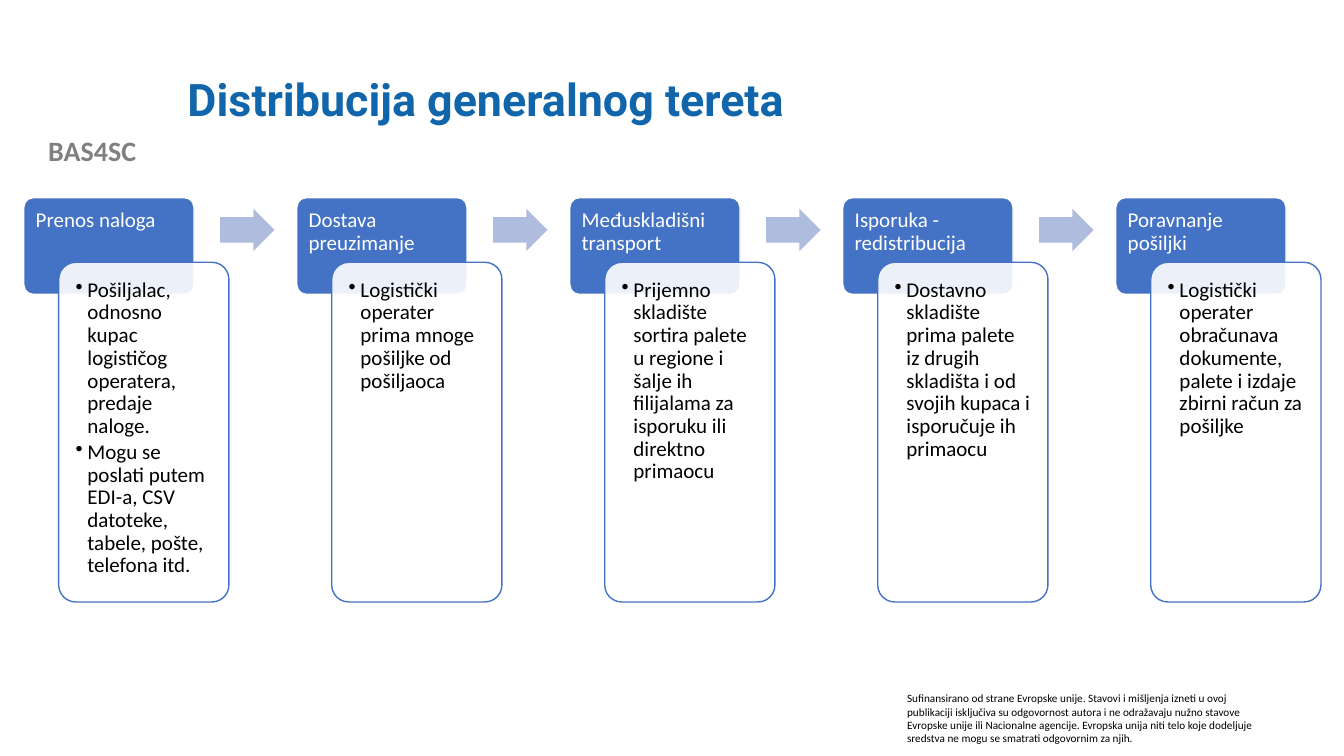
from lxml import etree
from pptx import Presentation
from pptx.dml.color import RGBColor
from pptx.enum.shapes import MSO_SHAPE
from pptx.enum.text import MSO_ANCHOR, MSO_AUTO_SIZE, PP_ALIGN
from pptx.oxml.ns import qn
from pptx.util import Cm, Pt

ROUNDED = MSO_SHAPE.ROUNDED_RECTANGLE
RIGHT_ARROW = MSO_SHAPE.RIGHT_ARROW
TOP = MSO_ANCHOR.TOP
MIDDLE = MSO_ANCHOR.MIDDLE
NO_AUTOFIT = MSO_AUTO_SIZE.NONE
LEFT = PP_ALIGN.LEFT
CENTER = PP_ALIGN.CENTER

BLUE, WHITE, BLACK = "4472C4", "FFFFFF", "000000"
TITLE_BLUE, GREY, ARROW_BLUE = "1065AB", "808080", "B0BCDE"

TITLE = "Distribucija generalnog tereta"
PROJECT = "BAS4SC"
DISCLAIMER = (
    "Sufinansirano od strane Evropske unije. Stavovi i mišljenja izneti u ovoj "
    "publikaciji isključiva su odgovornost autora i ne odražavaju nužno stavove "
    "Evropske unije ili Nacionalne agencije. Evropska unija niti telo koje dodeljuje "
    "sredstva ne mogu se smatrati odgovornim za njih."
)
STAGES = [
    ("Prenos naloga", [
        "Pošiljalac, odnosno kupac logističog operatera, predaje naloge.",
        "Mogu se poslati putem EDI-a, CSV datoteke, tabele, pošte, telefona itd.",
    ]),
    ("Dostava preuzimanje", ["Logistički operater prima mnoge pošiljke od pošiljaoca"]),
    ("Međuskladišni transport", [
        "Prijemno skladište sortira palete u regione i šalje ih filijalama za "
        "isporuku ili direktno primaocu",
    ]),
    ("Isporuka - redistribucija", [
        "Dostavno skladište prima palete iz drugih skladišta i od svojih kupaca "
        "i isporučuje ih primaocu",
    ]),
    ("Poravnanje pošiljki", [
        "Logistički operater obračunava dokumente, palete i izdaje zbirni račun za pošiljke",
    ]),
]


def color(hex_value):
    """Return the colour for a hex string."""
    return RGBColor.from_string(hex_value)


def format_paragraph(paragraph, size, hex_value, bold=False, font="Calibri", align=LEFT):
    """Set the alignment and the run fonts of a paragraph."""
    paragraph.alignment = align
    for run in paragraph.runs:
        run.font.name = font
        run.font.size = Pt(size)
        run.font.bold = bold
        run.font.color.rgb = color(hex_value)


def add_bullet(paragraph):
    """Give a paragraph a round bullet with a hanging indent."""
    properties = paragraph._p.get_or_add_pPr()
    properties.set("marL", str(Cm(0.3)))
    properties.set("indent", str(-Cm(0.3)))
    etree.SubElement(properties, qn("a:buChar")).set("char", "•")


def add_block(slide, kind, box, fill, line=None):
    """Add a flat preset shape in the given box."""
    shape = slide.shapes.add_shape(kind, *(Cm(length) for length in box))
    shape.shadow.inherit = False
    shape.fill.solid()
    shape.fill.fore_color.rgb = color(fill)
    if line:
        shape.line.color.rgb = color(line)
        shape.line.width = Pt(1)
    else:
        shape.line.fill.background()
    return shape


def fill_text(shape, lines, hex_value, margin, bulleted=False, space_after=0):
    """Write top-aligned paragraphs into a shape."""
    frame = shape.text_frame
    frame.word_wrap = True
    frame.vertical_anchor = TOP
    frame.margin_left = frame.margin_right = Cm(margin)
    frame.margin_top = frame.margin_bottom = Cm(margin)
    frame.text = "\n".join(lines)
    for paragraph in frame.paragraphs:
        paragraph.line_spacing = 0.9
        paragraph.space_after = Pt(space_after)
        if bulleted:
            add_bullet(paragraph)
        format_paragraph(paragraph, 15, hex_value)


def add_stage(slide, left, top, heading, points):
    """Add a heading block and its overlapping detail card."""
    header = add_block(slide, ROUNDED, (left, top, 4.29, 2.44), BLUE, WHITE)
    header.adjustments[0] = 0.1
    fill_text(header, [heading], WHITE, 0.23)

    card = add_block(slide, ROUNDED, (left + 0.88, top + 1.63, 4.29, 8.56), WHITE, BLUE)
    card.adjustments[0] = 0.1
    card_color = card.fill._xPr.find(qn("a:solidFill"))[0]
    etree.SubElement(card_color, qn("a:alpha")).set("val", "90000")
    fill_text(card, points, BLACK, 0.3, bulleted=True, space_after=2.25)


def add_process(slide, left, top, step):
    """Add all stages in a row with an arrow between neighbours."""
    for index, (heading, points) in enumerate(STAGES):
        stage_left = left + index * step
        add_stage(slide, stage_left, top, heading, points)
        if index < len(STAGES) - 1:
            box = (stage_left + 4.95, top + 0.28, 1.37, 1.07)
            arrow = add_block(slide, RIGHT_ARROW, box, ARROW_BLUE)
            arrow.adjustments[0] = 0.6
            arrow.adjustments[1] = 0.5


def add_title(slide, left, top, width, height):
    """Place and format the title placeholder."""
    title = slide.shapes.title
    title.left, title.top = Cm(left), Cm(top)
    title.width, title.height = Cm(width), Cm(height)
    frame = title.text_frame
    frame.text = TITLE
    frame.auto_size = NO_AUTOFIT
    frame.vertical_anchor = MIDDLE
    frame.paragraphs[0].line_spacing = 0.9
    format_paragraph(frame.paragraphs[0], 32, TITLE_BLUE, bold=True, font="Roboto")


def add_label(slide, box, text, size, hex_value, bold=False, align=LEFT):
    """Add a wrapped text box with one paragraph."""
    frame = slide.shapes.add_textbox(*(Cm(length) for length in box)).text_frame
    frame.word_wrap = True
    frame.text = text
    format_paragraph(frame.paragraphs[0], size, hex_value, bold, align=align)


def main():
    """Build and save the presentation."""
    presentation = Presentation()
    presentation.slide_width = Cm(33.87)
    presentation.slide_height = Cm(19.05)
    slide = presentation.slides.add_slide(presentation.slide_layouts[5])
    add_label(slide, (0, 3.25, 4.65, 1.12), PROJECT, 20, GREY, bold=True, align=CENTER)
    add_label(slide, (22.61, 17.3, 9.4, 1.63), DISCLAIMER, 8, BLACK)
    add_title(slide, 4.47, 1.02, 27.08, 3.1)
    add_process(slide, 0.6, 4.98, 6.88)
    presentation.save("out.pptx")


if __name__ == "__main__":
    main()
